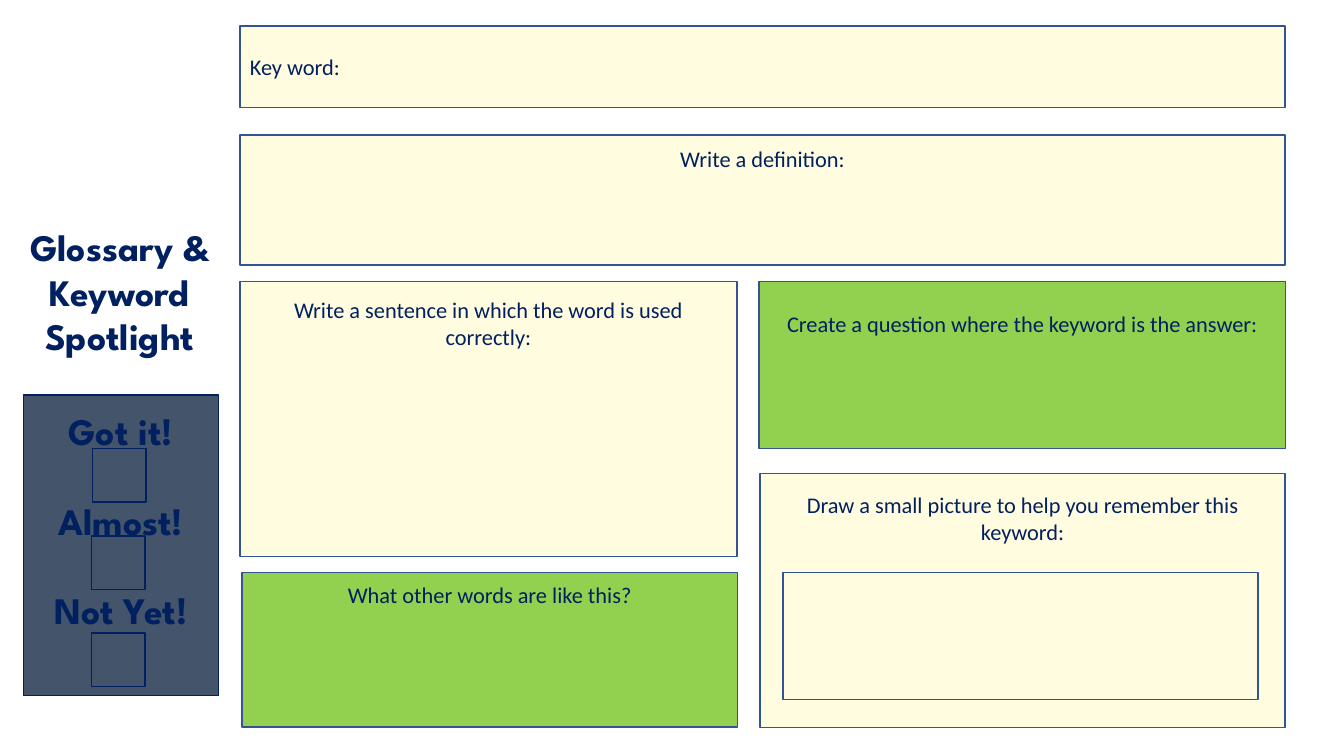
"""Build the glossary and keyword spotlight worksheet slide."""
from pptx import Presentation
from pptx.dml.color import RGBColor
from pptx.enum.shapes import MSO_SHAPE
from pptx.enum.text import MSO_ANCHOR, PP_ALIGN
from pptx.util import Pt

NAVY = RGBColor(0x00, 0x20, 0x60)
BLUE = RGBColor(0x32, 0x54, 0x91)
CREAM = RGBColor(0xFF, 0xFC, 0xDF)
GREEN = RGBColor(0x92, 0xD0, 0x50)
SLATE = RGBColor(0x44, 0x54, 0x6A)

HEADING = {"font": "League Spartan", "size": 26.7, "bold": True, "side": 9.4, "top": 9.4}


def write_text(shape, *lines, font="Calibri", size=16, bold=False, side=7.2, top=3.6,
               align=PP_ALIGN.CENTER, anchor=MSO_ANCHOR.TOP, gap=0):
    frame = shape.text_frame
    frame.word_wrap = True
    frame.vertical_anchor = anchor
    frame.margin_left = frame.margin_right = Pt(side)
    frame.margin_top = Pt(top)
    for index, line in enumerate(lines):
        paragraph = frame.add_paragraph() if index else frame.paragraphs[0]
        paragraph.alignment = align
        paragraph.space_before = Pt(gap if index else 0)
        run = paragraph.add_run()
        run.text = line
        run.font.name = font
        run.font.size = Pt(size)
        run.font.bold = bold
        run.font.color.rgb = NAVY


class Worksheet:
    def __init__(self, slide):
        self.slide = slide
        self.line_width = Pt(1)

    def box(self, left, top, width, height, fill=CREAM, line=BLUE):
        shape = self.slide.shapes.add_shape(
            MSO_SHAPE.RECTANGLE, Pt(left), Pt(top), Pt(width), Pt(height))
        shape.shadow.inherit = False
        shape.fill.solid()
        shape.fill.fore_color.rgb = fill
        shape.line.color.rgb = line
        shape.line.width = self.line_width
        return shape

    def prompt(self, text, place, fill=CREAM, **text_format):
        write_text(self.box(*place, fill=fill), text, **text_format)

    def title(self, text, place):
        shape = self.slide.shapes.add_textbox(*map(Pt, place))
        write_text(shape, text, **HEADING)

    def checklist(self, place, labels, checkboxes, side):
        panel = self.box(*place, fill=SLATE, line=NAVY)
        write_text(panel, *labels, gap=32, **HEADING)
        for left, top in checkboxes:
            self.box(left, top, side, side, fill=SLATE, line=NAVY)


def main():
    presentation = Presentation()
    presentation.slide_width = Pt(960)
    presentation.slide_height = Pt(540)
    sheet = Worksheet(presentation.slides.add_slide(presentation.slide_layouts[6]))

    sheet.prompt("Key word:", (171.4, 18.7, 746.6, 58.3),
                 align=PP_ALIGN.LEFT, anchor=MSO_ANCHOR.MIDDLE)
    sheet.prompt("Write a definition:", (171.4, 96.5, 746.6, 92.9), top=7.4)
    sheet.prompt("Write a sentence in which the word is used correctly:",
                 (171.4, 200.9, 355, 196.6), top=10.4)
    sheet.prompt("Create a question where the keyword is the answer:",
                 (542.2, 200.9, 376.2, 119.5), fill=GREEN, top=20.7)
    sheet.prompt("What other words are like this?",
                 (172.8, 409, 354.2, 110.2), fill=GREEN, top=6.3)
    sheet.title("Glossary & Keyword Spotlight", (5, 150.5, 161.3, 125.3))
    sheet.prompt("Draw a small picture to help you remember this keyword:",
                 (542.9, 338.4, 375.1, 181.4), top=12.6)
    sheet.checklist((16.6, 282.2, 139.7, 214.6), ("Got it!", "Almost!", "Not Yet!"),
                    ((66.2, 320.4), (65.5, 383), (65.5, 452.2)), side=38.2)
    sheet.box(559.4, 409, 339.1, 90.7)

    presentation.save("out.pptx")


if __name__ == "__main__":
    main()
